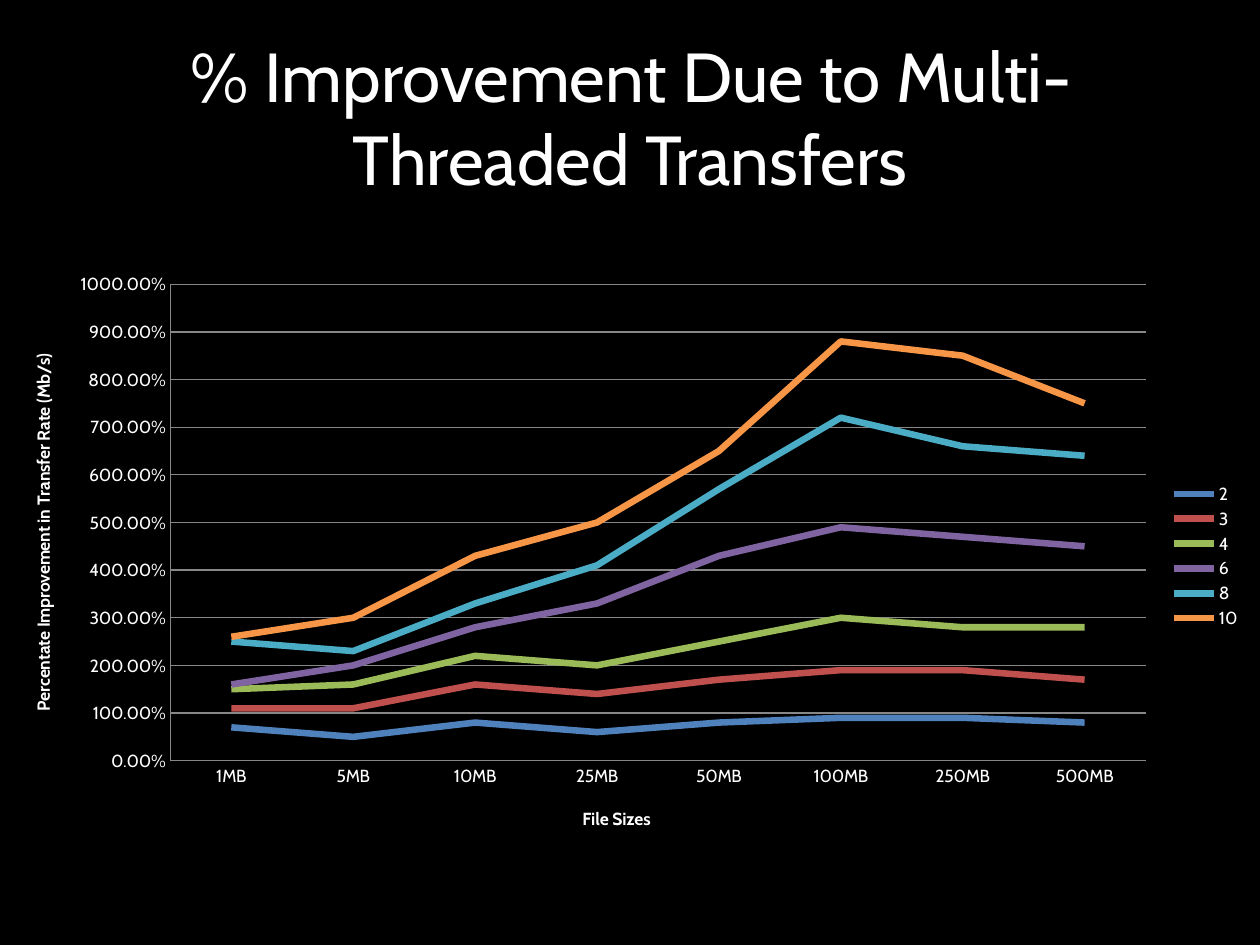
from dataclasses import dataclass

from lxml import etree
from pptx import Presentation
from pptx.chart.data import CategoryChartData
from pptx.dml.color import RGBColor
from pptx.enum.chart import XL_CHART_TYPE as ChartType
from pptx.enum.chart import XL_LEGEND_POSITION as LegendPosition
from pptx.enum.chart import XL_MARKER_STYLE as MarkerStyle
from pptx.enum.chart import XL_TICK_MARK as TickMark
from pptx.enum.text import MSO_ANCHOR as Anchor
from pptx.enum.text import PP_ALIGN as Align
from pptx.oxml.ns import qn
from pptx.util import Cm, Pt


@dataclass(frozen=True)
class Theme:
    font: str = "Cabin"
    background: RGBColor = RGBColor.from_string("000000")
    text: RGBColor = RGBColor.from_string("FFFFFF")
    grid: RGBColor = RGBColor.from_string("878787")
    title_size: float = 39.6
    chart_size: float = 10
    series_width: float = 3.75
    grid_width: float = 0.75


@dataclass(frozen=True)
class Box:
    left: float
    top: float
    width: float
    height: float

    def lengths(self):
        return Cm(self.left), Cm(self.top), Cm(self.width), Cm(self.height)


THEME = Theme()
FILE_SIZES = ["1MB", "5MB", "10MB", "25MB", "50MB", "100MB", "250MB", "500MB"]
THREADS = {
    "2": ("4F81BD", [0.7, 0.5, 0.8, 0.6, 0.8, 0.9, 0.9, 0.8]),
    "3": ("C0504D", [1.1, 1.1, 1.6, 1.4, 1.7, 1.9, 1.9, 1.7]),
    "4": ("9BBB59", [1.5, 1.6, 2.2, 2, 2.5, 3, 2.8, 2.8]),
    "6": ("8064A2", [1.6, 2, 2.8, 3.3, 4.3, 4.9, 4.7, 4.5]),
    "8": ("4BACC6", [2.5, 2.3, 3.3, 4.1, 5.7, 7.2, 6.6, 6.4]),
    "10": ("F79646", [2.6, 3, 4.3, 5, 6.5, 8.8, 8.5, 7.5]),
}


def style_font(font, size, bold=False):
    font.name = THEME.font
    font.size = Pt(size)
    font.bold = bold
    font.color.rgb = THEME.text


def style_line(line, color, width):
    line.color.rgb = color
    line.width = Pt(width)


def set_layout(element, index, **fractions):
    for old in element.findall(qn("c:layout")):
        element.remove(old)
    layout = etree.Element(qn("c:layout"))
    manual = etree.SubElement(layout, qn("c:manualLayout"))
    settings = {"xMode": "edge", "yMode": "edge", **fractions}
    if element.tag == qn("c:plotArea"):
        settings = {"layoutTarget": "inner", **settings}
    for name, value in settings.items():
        etree.SubElement(manual, qn(f"c:{name}"), val=str(value))
    element.insert(index, layout)


def style_axis(axis, title, x, y):
    axis.major_tick_mark = axis.minor_tick_mark = TickMark.NONE
    style_font(axis.tick_labels.font, THEME.chart_size)
    style_line(axis.format.line, THEME.grid, THEME.grid_width)
    span = axis.axis_title.text_frame.paragraphs[0].add_run()
    span.text = title
    style_font(span.font, THEME.chart_size, bold=True)
    set_layout(axis.axis_title._element, 1, x=x, y=y)


def add_title(page, box, text):
    frame = page.shapes.add_textbox(*box.lengths()).text_frame
    frame.word_wrap = True
    frame.vertical_anchor = Anchor.MIDDLE
    para = frame.paragraphs[0]
    para.alignment = Align.CENTER
    span = para.add_run()
    span.text = text
    style_font(span.font, THEME.title_size)


def add_improvement_chart(page, box):
    data = CategoryChartData(number_format="0.00%")
    data.categories = FILE_SIZES
    for name, (_, values) in THREADS.items():
        data.add_series(name, values)
    chart = page.shapes.add_chart(ChartType.LINE, *box.lengths(), data).chart
    chart.has_title = False
    style_font(chart.font, THEME.chart_size)

    style_axis(chart.category_axis, "File Sizes", 0.46, 0.92)
    rates = chart.value_axis
    style_axis(rates, "Percentate Improvement in Transfer Rate (Mb/s)", 0.02, 0.15)
    rates.minimum_scale, rates.maximum_scale, rates.major_unit = 0, 10, 1
    rates.tick_labels.number_format = "0.00%"
    rates.tick_labels.number_format_is_linked = False
    style_line(rates.major_gridlines.format.line, THEME.grid, THEME.grid_width)

    plot = chart.plots[0]
    plot.vary_by_categories = False
    for series, (color, _) in zip(plot.series, THREADS.values()):
        series.smooth = False
        series.marker.style = MarkerStyle.NONE
        style_line(series.format.line, RGBColor.from_string(color), THEME.series_width)

    chart.has_legend = True
    legend = chart.legend
    legend.position = LegendPosition.RIGHT
    legend.include_in_layout = False
    style_font(legend.font, THEME.chart_size)
    set_layout(legend._element, 1, x=0.93, y=0.37, w=0.06, h=0.26)
    plot_area = chart._chartSpace.chart.plotArea
    set_layout(plot_area, 0, x=0.134, y=0.038, w=0.778, h=0.81)


def main():
    deck = Presentation()
    deck.slide_width, deck.slide_height = Cm(25.4), Cm(19.05)
    page = deck.slides.add_slide(deck.slide_layouts[6])
    page.background.fill.solid()
    page.background.fill.fore_color.rgb = THEME.background
    add_title(page, Box(1.27, 0.76, 22.86, 3.18), "% Improvement Due to Multi-Threaded Transfers")
    add_improvement_chart(page, Box(0.05, 5.28, 25.27, 11.86))
    deck.save("out.pptx")


if __name__ == "__main__":
    main()
